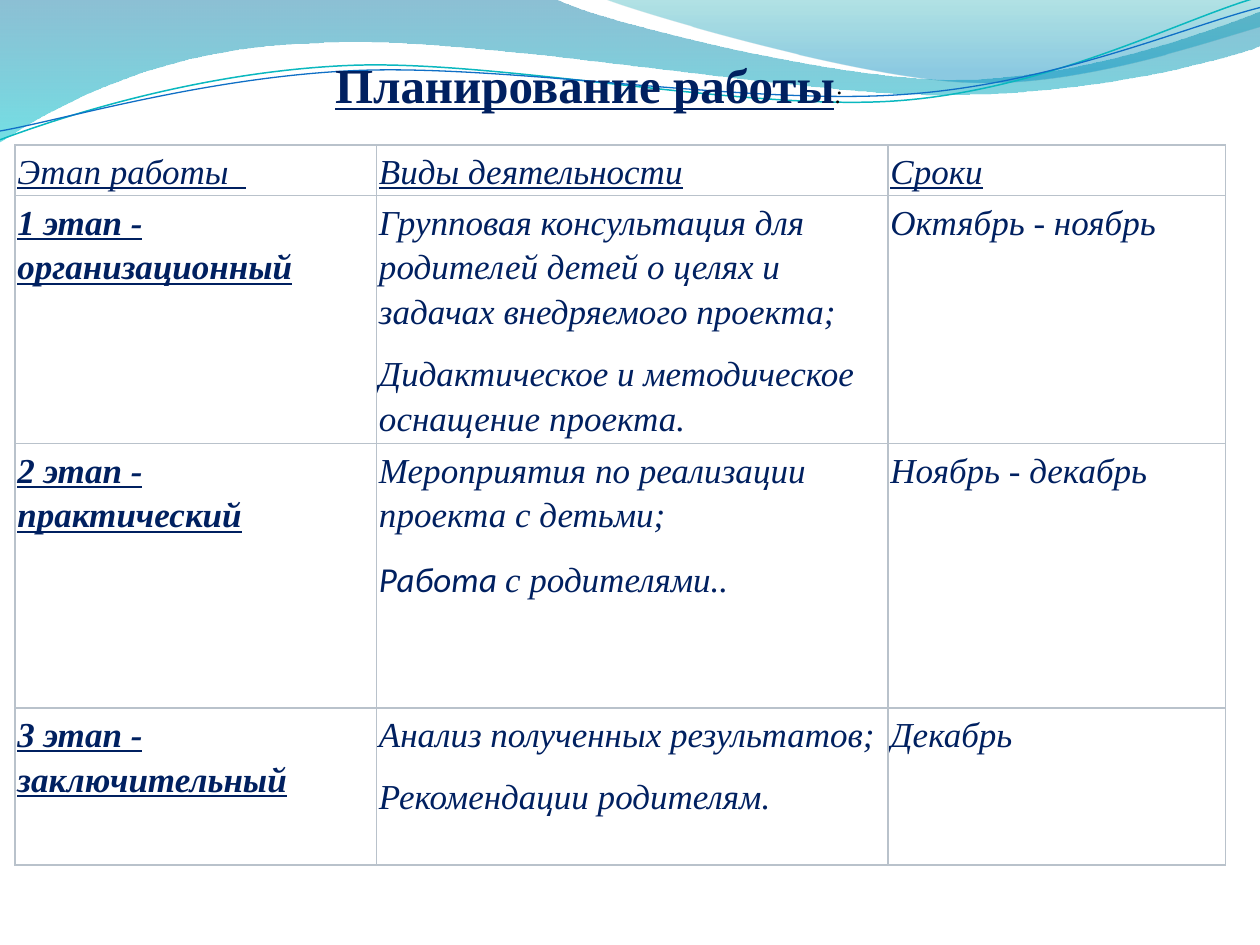
from pptx import Presentation
from pptx.dml.color import RGBColor
from pptx.enum.text import MSO_ANCHOR, MSO_AUTO_SIZE, PP_ALIGN
from pptx.oxml.ns import qn
from pptx.oxml.xmlchemy import OxmlElement
from pptx.util import Cm, Pt

FONT, NAVY, GRID = "Times New Roman", "002060", "B9C2CB"


def color(code):
    return RGBColor.from_string(code)


def write(para, text, size=20, font=FONT, ink=NAVY, bold=False, italic=True, under=False):
    run = para.add_run()
    run.text = text
    face = run.font
    face.size, face.name = Pt(size), font
    face.bold, face.italic, face.underline = bold, italic, under
    face.color.rgb = color(ink)


def bend(shape, parts):
    """Join the three line segments of each curve into one cubic segment."""
    lines = iter(list(shape._element.spPr.iter(qn("a:lnTo"))))
    for part in parts:
        first = next(lines)
        if len(part) == 1:
            continue
        curve = OxmlElement("a:cubicBezTo")
        first.addprevious(curve)
        for line in (first, next(lines), next(lines)):
            curve.append(line[0])
            line.getparent().remove(line)


class Deck:
    def __init__(self):
        self.file = Presentation()
        self.file.slide_width, self.file.slide_height = Cm(25.4), Cm(19.05)
        self.slide = self.file.slides.add_slide(self.file.slide_layouts[5])
        self.shapes = self.slide.shapes

    def wave(self, start, parts, stops=None, line=None, width=0.75):
        # Points are in inches: one makes a corner, three make a curve
        spots = [(Cm(2.54 * x), Cm(2.54 * y)) for x, y in [start, *sum(parts, ())]]
        pen = self.shapes.build_freeform(*spots[0], scale=1.0)
        pen.add_line_segments(spots[1:], close=bool(stops))
        shape = pen.convert_to_shape()
        bend(shape, parts)
        shape.shadow.inherit = False
        if stops:
            shape.line.fill.background()
            self.shade(shape, stops)
        else:
            shape.fill.background()
            shape.line.color.rgb = color(line)
            shape.line.width = Pt(width)

    def shade(self, shape, stops):
        shape.fill.gradient()
        shape.fill.gradient_angle = 270
        for stop, (place, code, _) in zip(shape.fill.gradient_stops, stops):
            stop.position, stop.color.rgb = place, color(code)
        tints = shape._element.spPr.iter(qn("a:srgbClr"))
        for tint, (_, _, solid) in zip(list(tints), stops):
            alpha = OxmlElement("a:alpha")
            alpha.set("val", str(solid * 1000))
            tint.append(alpha)

    def title(self, text, tail, left, top, width, height):
        shape = self.shapes.title
        shape.left, shape.top, shape.width, shape.height = map(Cm, (left, top, width, height))
        frame = shape.text_frame
        frame.word_wrap, frame.auto_size = False, MSO_AUTO_SIZE.SHAPE_TO_FIT_TEXT
        frame.vertical_anchor = MSO_ANCHOR.MIDDLE
        para = frame.paragraphs[0]
        para.alignment = PP_ALIGN.LEFT
        write(para, text, size=28, bold=True, italic=False, under=True)
        write(para, tail, size=14, ink="000000")
        # Bring the title in front of the waves
        self.shapes._spTree.append(shape._element)

    def table(self, rows, left, top, widths, heights):
        grid = self.shapes.add_table(len(rows), len(widths), Cm(left), Cm(top),
                                     Cm(sum(widths)), Cm(sum(heights))).table
        grid.first_row = grid.horz_banding = False
        for col, width in zip(grid.columns, widths):
            col.width = Cm(width)
        for row, height in zip(grid.rows, heights):
            row.height = Cm(height)
        for r, row in enumerate(rows):
            for c, paras in enumerate(row):
                self.cell(grid.cell(r, c), paras, bold=r > 0 and c == 0, under=r == 0 or c == 0)

    def cell(self, cell, paras, **style):
        cell.margin_left = cell.margin_right = cell.margin_top = cell.margin_bottom = Cm(0.05)
        self.border(cell)
        cell.fill.solid()
        cell.fill.fore_color.rgb = color("FFFFFF")
        frame = cell.text_frame
        for n, runs in enumerate(paras):
            para = frame.add_paragraph() if n else frame.paragraphs[0]
            para.line_spacing, para.space_after = 1.15, Pt(10)
            for text, font in runs:
                write(para, text, font=font, **style)

    def border(self, cell):
        props = cell._tc.get_or_add_tcPr()
        for side in ("L", "R", "T", "B"):
            edge = OxmlElement(f"a:ln{side}")
            edge.set("w", str(Pt(1)))
            fill, tint = OxmlElement("a:solidFill"), OxmlElement("a:srgbClr")
            tint.set("val", GRID)
            fill.append(tint)
            edge.append(fill)
            props.append(edge)


def plain(*texts):
    return [[(text, FONT)] for text in texts]


def main():
    deck = Deck()

    # Waves along the top
    deck.wave((0, 0), [
        ((4.4, -0.01),),
        ((4.76, 0.17), (6.64, 0.63), (7.58, 0.63)),
        ((8.53, 0.63), (9.58, 0.26), (10, 0.09)),
        ((10.01, 0.36),),
        ((9.83, 0.44), (8.7, 0.76), (7.46, 0.75)),
        ((6.22, 0.75), (3.82, 0.28), (2.57, 0.34)),
        ((1.29, 0.36), (0.46, 0.83), (-0.01, 1.13)),
    ], stops=[(0, "0074A1", 45), (1, "00C6CF", 55)])
    deck.wave((4.79, -0.01), [
        ((5.09, 0.11), (6.82, 0.62), (7.69, 0.65)),
        ((8.56, 0.69), (9.61, 0.32), (10, 0.21)),
        ((10, 0),),
    ], stops=[(0, "00A1A9", 30), (0.8, "008BBF", 45)])
    deck.wave((0, 1.11), [
        ((0.48, 0.93), (1.58, 0.57), (2.77, 0.52)),
        ((3.95, 0.47), (5.93, 0.89), (7.13, 0.8)),
        ((8.33, 0.71), (9.38, 0.15), (9.98, -0.02)),
    ], line="0AB8BF", width=0.85)
    deck.wave((0, 1.04), [
        ((0.47, 0.96), (1.64, 0.61), (2.83, 0.56)),
        ((4.03, 0.51), (5.97, 0.84), (7.17, 0.75)),
        ((8.36, 0.67), (9.41, 0.21), (10, 0.06)),
    ], line="0F6FC6")

    # Work plan
    deck.table([
        [plain("Этап работы  "), plain("Виды деятельности"), plain("Сроки")],
        [plain("1 этап - организационный"),
         plain("Групповая консультация для родителей детей о целях и задачах внедряемого проекта;",
               "Дидактическое и методическое оснащение проекта."),
         plain("Октябрь - ноябрь")],
        [plain("2 этап - практический"),
         plain("Мероприятия по реализации проекта с детьми;")
         + [[("Работа ", "Calibri"), ("с родителями..", FONT)]],
         plain("Ноябрь - декабрь")],
        [plain("3 этап - заключительный"),
         plain("Анализ полученных результатов;", "Рекомендации родителям."),
         plain("Декабрь")],
    ], 0.3, 2.92, widths=(7.29, 10.31, 6.8), heights=(1.02, 5, 5.33, 3.17))

    # Heading
    deck.title("Планирование работы", ":", 6.5, 0.97, 10.87, 1.45)
    deck.file.save("out.pptx")


if __name__ == "__main__":
    main()
